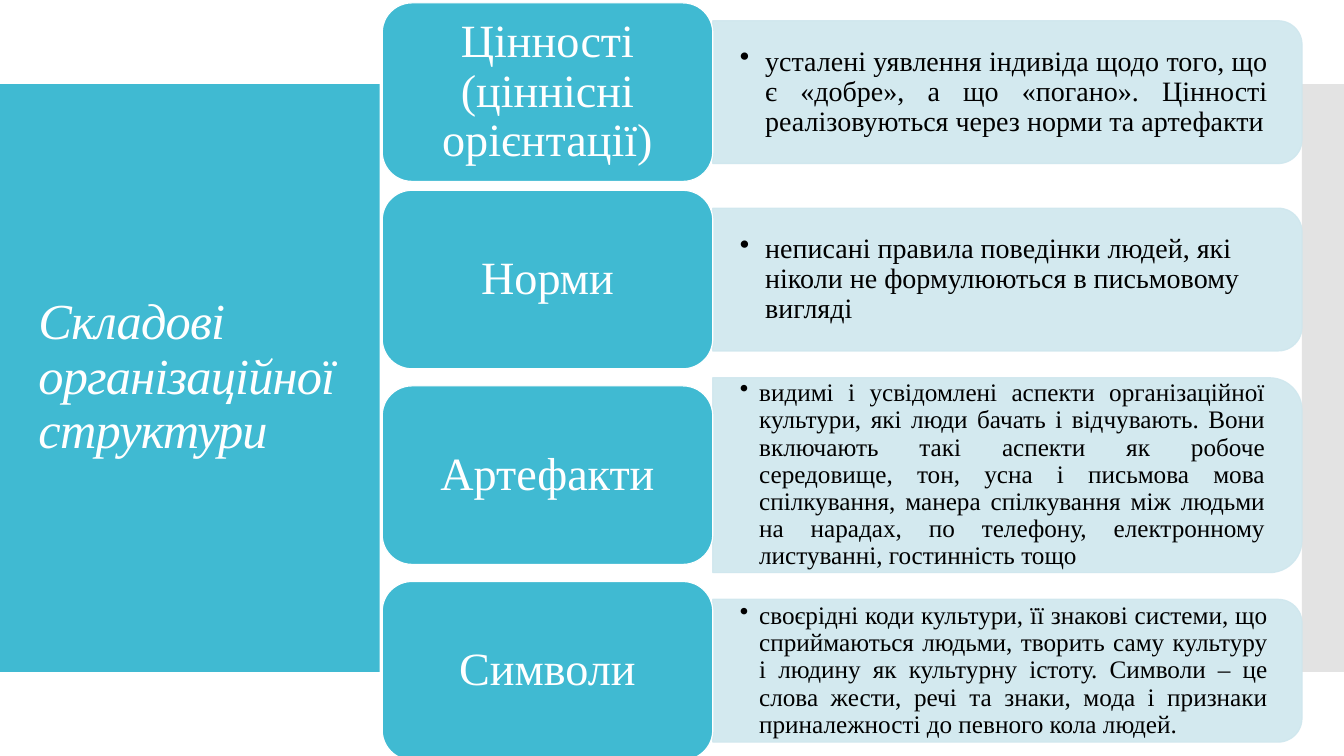
from dataclasses import dataclass
from lxml.etree import SubElement
from pptx import Presentation
from pptx.dml.color import RGBColor
from pptx.enum.shapes import MSO_SHAPE
from pptx.enum.text import MSO_ANCHOR, PP_ALIGN
from pptx.oxml.ns import qn
from pptx.util import Inches, Pt


@dataclass(frozen=True)
class Theme:
    font: str = "Times New Roman"
    teal: str = "40BAD2"
    pale: str = "CFE7EE"
    grey: str = "C8C8C8"
    white: str = "FFFFFF"
    black: str = "000000"
    title: int = 36
    label: int = 33
    large: int = 20
    small: int = 18
    line: float = 0.85


theme = Theme()
deck = Presentation()
deck.slide_width, deck.slide_height = Inches(13.333), Inches(7.5)
slide = deck.slides.add_slide(deck.slide_layouts[6])
unit = deck.slide_height / 90  # the slide is a grid of 160 columns by 90 rows


def block(kind, left, top, width, height, fill, line=None, alpha=100):
    """Draw a filled shape, with lengths in grid units and alpha in percent."""
    shape = slide.shapes.add_shape(
        kind, *(round(n * unit) for n in (left, top, width, height)))
    shape.shadow.inherit = False
    shape.fill.solid()
    shape.fill.fore_color.rgb = RGBColor.from_string(fill)
    if line:
        shape.line.color.rgb = RGBColor.from_string(line)
        shape.line.width = Pt(theme.line)
    else:
        shape.line.fill.background()
    if alpha < 100:
        for color in shape._element.spPr.iter(qn("a:srgbClr")):
            SubElement(color, qn("a:alpha"), val=str(alpha * 1000))
    return shape


def write(shape, text, size, color, align, inset):
    frame = shape.text_frame
    frame.word_wrap = True
    frame.vertical_anchor = MSO_ANCHOR.MIDDLE
    frame.margin_left = frame.margin_right = Inches(inset)
    frame.margin_top = frame.margin_bottom = Inches(inset / 2)
    para = frame.paragraphs[0]
    para.text = text
    para.alignment = align
    para.line_spacing = 0.9
    para.font.name = theme.font
    para.font.size = Pt(size)
    para.font.color.rgb = RGBColor.from_string(color)
    return para


# Side bands and title
block(MSO_SHAPE.RECTANGLE, 0, 10, 45.2, 70, theme.teal)
block(MSO_SHAPE.RECTANGLE, 155, 10, 5, 70, theme.grey, alpha=50)
box = slide.shapes.add_textbox(
    *(round(n * unit) for n in (3.4, 14.8, 40.7, 60.4)))
title = write(box, "Складові організаційної структури",
              theme.title, theme.white, PP_ALIGN.LEFT, 0.1)
title.font.italic = True
title._p.pPr.find(qn("a:defRPr")).set("spc", "-60")

# Rows: label, text, text size, alignment, panel height, bullet indent
rows = [
    ("Цінності (ціннісні орієнтації)",
     "усталені уявлення індивіда щодо того, що є «добре», а що «погано». "
     "Цінності реалізовуються через норми та артефакти",
     theme.large, PP_ALIGN.JUSTIFY, 17, 0.25),
    ("Норми",
     "неписані правила поведінки людей, які ніколи не формулюються "
     "в письмовому вигляді",
     theme.large, PP_ALIGN.LEFT, 17, 0.25),
    ("Артефакти",
     "видимі і усвідомлені аспекти організаційної культури, які люди бачать "
     "і відчувають. Вони включають такі аспекти як робоче середовище, тон, "
     "усна і письмова мова спілкування, манера спілкування між людьми на "
     "нарадах, по телефону, електронному листуванні, гостинність тощо",
     theme.small, PP_ALIGN.JUSTIFY, 23.2, 0.19),
    ("Символи",
     "своєрідні коди культури, її знакові системи, що сприймаються людьми, "
     "творить саму культуру і людину як культурну істоту. Символи – це слова "
     "жести, речі та знаки, мода і признаки приналежності до певного кола "
     "людей.",
     theme.small, PP_ALIGN.JUSTIFY, 17, 0.19),
]
left, wide, tall, gap = 45.5, 39.35, 21.25, 1.06
edge = left + wide
span = 155 - edge
top = 0.35
for label, text, size, align, high, indent in rows:
    mid = top + max(tall, high) / 2

    # The panel is turned so that its two round corners face right
    panel = block(MSO_SHAPE.ROUND_2_SAME_RECTANGLE,
                  edge + (span - high) / 2, mid - span / 2, high, span,
                  theme.pale, theme.pale, 90)
    panel.rotation = 90

    # Text stays clear of the round corners
    box = slide.shapes.add_textbox(*(round(n * unit) for n in (
        edge, mid - high * 0.45, span - high * 0.05, high * 0.9)))
    para = write(box, text, size, theme.black, align, 0.27)
    props = para._p.pPr
    props.set("marL", str(Inches(indent)))
    props.set("indent", str(-Inches(indent)))
    bullet = SubElement(props, qn("a:buChar"), char="•")
    props.find(qn("a:defRPr")).addprevious(bullet)

    card = block(MSO_SHAPE.ROUNDED_RECTANGLE, left, mid - tall / 2,
                 wide, tall, theme.teal, theme.white)
    write(card, label, theme.label, theme.white, PP_ALIGN.CENTER, 0.14)
    top += max(tall, high) + gap

deck.save("out.pptx")
